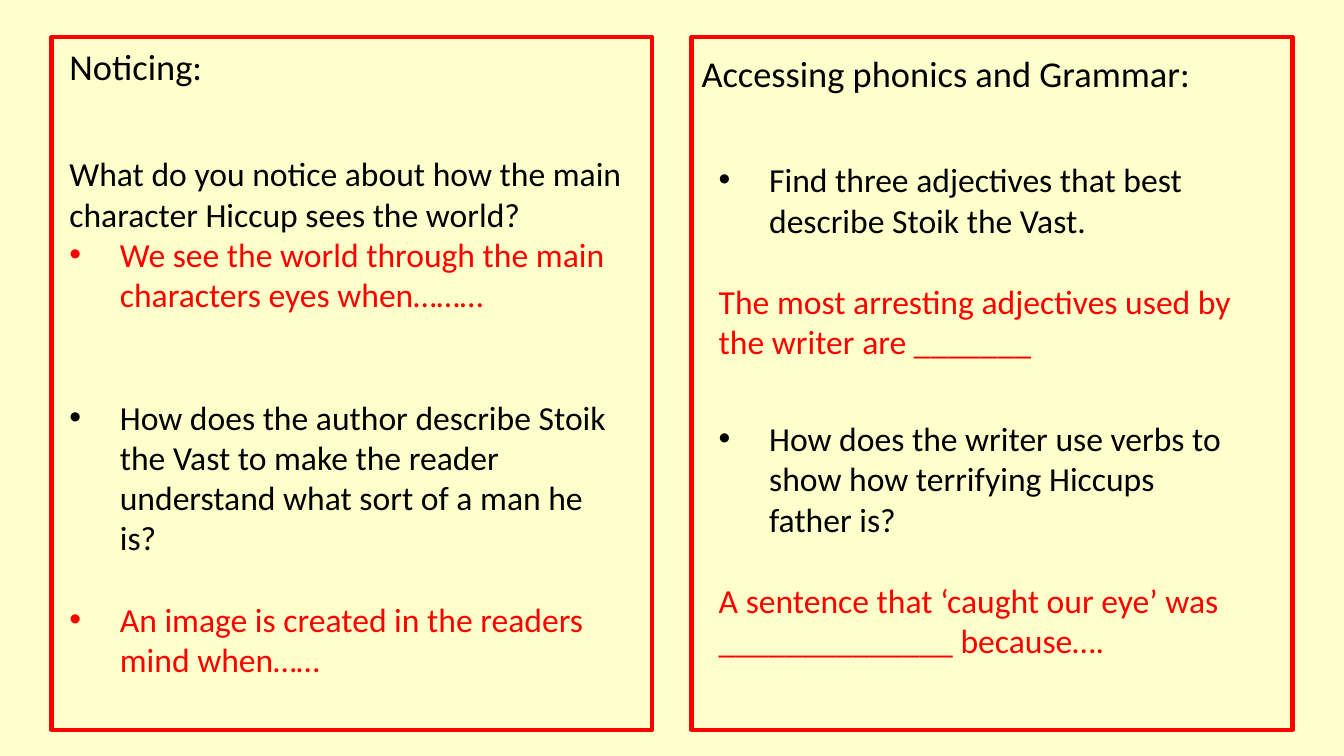
from dataclasses import dataclass

from lxml import etree
from pptx import Presentation
from pptx import util as u
from pptx.dml.color import RGBColor
from pptx.enum import shapes, text
from pptx.oxml import ns


@dataclass(frozen=True)
class Theme:
    paper: str = "FFFFCC"
    ink: str = "000000"
    accent: str = "FF0000"
    font: str = "Calibri"
    heading: int = 26
    body: int = 24
    border: int = 3
    indent: float = 0.5


@dataclass(frozen=True)
class Area:
    left: float
    top: float
    width: float
    height: float


@dataclass(frozen=True)
class Line:
    words: str
    color: str
    size: int
    bullet: bool = False
    gap: float = 0


@dataclass(frozen=True)
class Panel:
    frame: Area
    heading_area: Area
    heading: str
    body_area: Area
    body: tuple[Line, ...]


THEME = Theme()
WIDTH, HEIGHT = u.Inches(13.33), u.Inches(7.5)
ROW = 29.3


def prompt(words: str, bullet: bool = True, gap: float = 0) -> Line:
    return Line(words, THEME.ink, THEME.body, bullet, gap)


def starter(words: str, bullet: bool = False, gap: float = 0) -> Line:
    return Line(words, THEME.accent, THEME.body, bullet, gap)


PANELS = (
    Panel(
        Area(3.83, 4.93, 44.71, 91.6),
        Area(4.43, 5.2, 12.68, 7.6),
        "Noticing:",
        Area(4.43, 19.6, 42.76, 71.33),
        (
            prompt("What do you notice about how the main character Hiccup sees the world?", bullet=False),
            starter("We see the world through the main characters eyes when………", bullet=True),
            prompt(
                "How does the author describe Stoik the Vast to make the reader "
                "understand what sort of a man he is?",
                gap=2 * ROW,
            ),
            starter("An image is created in the readers mind when……", bullet=True, gap=ROW),
        ),
    ),
    Panel(
        Area(51.46, 4.93, 44.71, 91.6),
        Area(51.46, 6.13, 38.18, 7.2),
        "Accessing phonics and Grammar:",
        Area(52.74, 20.4, 39.76, 73.33),
        (
            prompt("Find three adjectives that best describe Stoik the Vast."),
            starter("The most arresting adjectives used by the writer are _______", gap=ROW),
            prompt(
                "How does the writer use verbs to show how terrifying Hiccups father is?",
                gap=ROW + 11,
            ),
            starter("A sentence that ‘caught our eye’ was ______________ because….", gap=ROW),
        ),
    ),
)


def apply(target: object, formats: dict[str, object]) -> None:
    for name, value in formats.items():
        setattr(target, name, value)


def place(area: Area) -> tuple[int, int, int, int]:
    return (
        round(WIDTH * area.left / 100),
        round(HEIGHT * area.top / 100),
        round(WIDTH * area.width / 100),
        round(HEIGHT * area.height / 100),
    )


def add_bullet(para) -> None:
    props = para._p.get_or_add_pPr()
    indent = u.Inches(THEME.indent)
    props.set("marL", str(indent))
    props.set("indent", str(-indent))
    etree.SubElement(props, ns.qn("a:buFont")).set("typeface", "Arial")
    etree.SubElement(props, ns.qn("a:buChar")).set("char", "•")


def draw_frame(page, area: Area) -> None:
    frame = page.shapes.add_shape(shapes.MSO_SHAPE.RECTANGLE, *place(area))
    frame.shadow.inherit = False
    frame.fill.background()
    frame.line.color.rgb = RGBColor.from_string(THEME.accent)
    frame.line.width = u.Pt(THEME.border)


def draw_text(page, area: Area, lines: tuple[Line, ...]) -> None:
    box = page.shapes.add_textbox(*place(area))
    frame = box.text_frame
    apply(frame, {"word_wrap": True, "auto_size": text.MSO_AUTO_SIZE.SHAPE_TO_FIT_TEXT})
    for index, line in enumerate(lines):
        para = frame.add_paragraph() if index else frame.paragraphs[0]
        if line.bullet:
            add_bullet(para)
        if line.gap:
            para.space_before = u.Pt(line.gap)
        span = para.add_run()
        span.text = line.words
        apply(span.font, {"name": THEME.font, "size": u.Pt(line.size)})
        span.font.color.rgb = RGBColor.from_string(line.color)


def main() -> None:
    deck = Presentation()
    apply(deck, {"slide_width": WIDTH, "slide_height": HEIGHT})
    page = deck.slides.add_slide(deck.slide_layouts[6])
    page.background.fill.solid()
    page.background.fill.fore_color.rgb = RGBColor.from_string(THEME.paper)
    for panel in PANELS:
        draw_frame(page, panel.frame)
        draw_text(page, panel.heading_area, (Line(panel.heading, THEME.ink, THEME.heading),))
        draw_text(page, panel.body_area, panel.body)
    deck.save("out.pptx")


if __name__ == "__main__":
    main()
